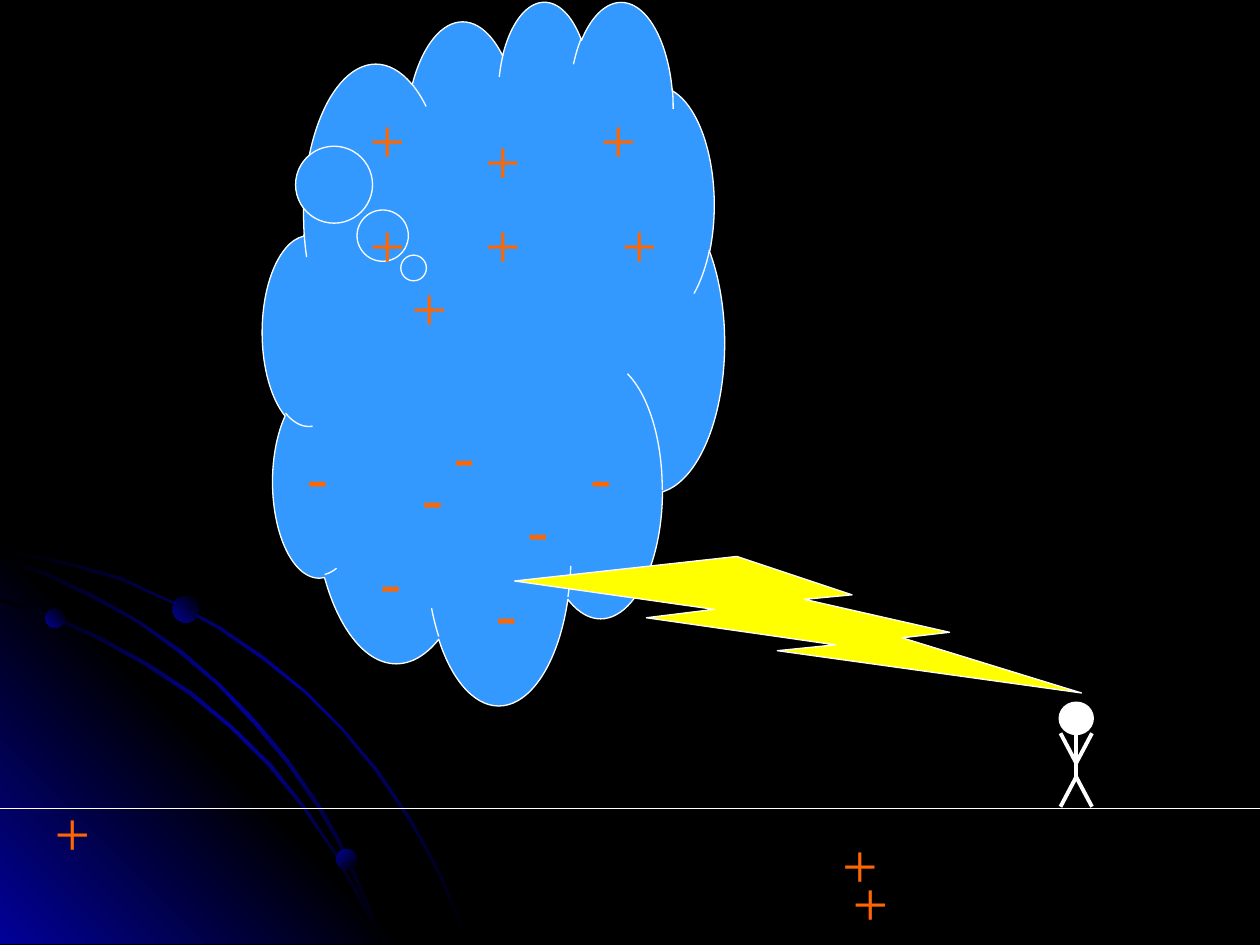
"""Build the slide of a charged thundercloud striking a person on the ground."""
from lxml.etree import SubElement
from pptx import Presentation
from pptx.dml.color import RGBColor
from pptx.enum.shapes import MSO_CONNECTOR, MSO_SHAPE
from pptx.enum.text import MSO_AUTO_SIZE, PP_ALIGN
from pptx.oxml.ns import qn
from pptx.util import Pt

COLOURS = {
    "night": "000000",
    "glow": "010199",
    "cloud": "3399FF",
    "charge": "FF6600",
    "bolt": "FFFF00",
    "white": "FFFFFF",
}
GRID = Pt(0.72)
ARC_STOPS = ("night", "glow", "night")
OUTER_ARC = [
    (57, 447), (28, 441), (0, 435), (0, 438), (28, 443), (56, 449), (97, 461), (135, 478),
    (173, 499), (208, 523), (241, 549), (271, 579), (298, 612), (323, 649), (337, 673),
    (350, 698), (360, 723), (370, 749), (372, 749), (362, 723), (352, 698), (339, 673),
    (325, 648), (300, 611), (272, 578), (242, 548), (209, 521), (174, 497), (136, 477), (98, 459),
]
CORNER = [(322, 749), (0, 749), (0, 427)]
INNER_ARC = [
    (285, 714), (294, 732), (301, 749), (303, 749), (296, 730), (286, 712), (266, 676),
    (242, 640), (215, 606), (184, 576), (152, 549), (117, 526), (79, 505), (41, 488),
    (0, 475), (0, 477), (39, 490), (77, 507), (115, 528), (150, 551), (183, 578),
    (213, 608), (240, 641), (265, 677),
]
MIDDLE_ARC = [
    (0, 442), (0, 444), (36, 457), (74, 475), (109, 494), (142, 518), (173, 544), (202, 575),
    (227, 605), (252, 641), (267, 667), (280, 694), (292, 722), (301, 749), (303, 749),
    (294, 720), (282, 693), (269, 665), (254, 639), (229, 603), (204, 573), (175, 543),
    (144, 516), (111, 493), (76, 473), (39, 455),
]
PLUSES = [
    (270, 114), (348, 114), (228, 150), (270, 66), (204, 114), (204, 54), (336, 54),
    (474, 468), (480, 490), (24, 450),
]
MINUSES = [(234, 258), (294, 276), (168, 246), (276, 324), (210, 306), (252, 234), (330, 246)]
LIMBS = [
    (615, 419, 615, 445),
    (606, 461, 615, 444),
    (615, 436, 624, 419),
    (615, 444, 624, 461),
    (606, 419, 615, 436),
]


def colour(name):
    return RGBColor.from_string(COLOURS[name])


def fill_gradient(shape, names, angle):
    shape.shadow.inherit = False
    shape.line.fill.background()
    shape.fill.background()
    properties = shape._element.spPr
    gradient = properties.makeelement(qn("a:gradFill"), {"rotWithShape": "1"})
    stops = SubElement(gradient, qn("a:gsLst"))
    for index, name in enumerate(names):
        position = 100000 * index // (len(names) - 1)
        stop = SubElement(stops, qn("a:gs"), pos=str(position))
        SubElement(stop, qn("a:srgbClr"), val=COLOURS[name])
    SubElement(gradient, qn("a:lin"), ang=str(angle * 60000), scaled="0")
    properties.replace(properties.find(qn("a:noFill")), gradient)


def add_outline(shapes, points, names, angle):
    builder = shapes.build_freeform(*points[0], scale=GRID)
    builder.add_line_segments(points[1:], close=True)
    fill_gradient(builder.convert_to_shape(), names, angle)


def add_planet(shapes, left, top, size, angle):
    planet = shapes.add_shape(MSO_SHAPE.OVAL, Pt(left), Pt(top), Pt(size), Pt(size))
    fill_gradient(planet, ("glow", "night"), angle)


def add_solid(shapes, kind, bounds, name, weight=0.75):
    shape = shapes.add_shape(kind, *map(Pt, bounds))
    shape.shadow.inherit = False
    shape.fill.solid()
    shape.fill.fore_color.rgb = colour(name)
    shape.line.color.rgb = colour("white")
    shape.line.width = Pt(weight)
    return shape


def add_line(shapes, ends, weight):
    line = shapes.add_connector(MSO_CONNECTOR.STRAIGHT, *map(Pt, ends))
    line.line.color.rgb = colour("white")
    line.line.width = Pt(weight)
    SubElement(line._element.spPr, qn("a:effectLst"))


def add_sign(shapes, sign, left, top, width):
    box = shapes.add_textbox(Pt(left), Pt(top), Pt(width), Pt(50.4))
    frame = box.text_frame
    frame.word_wrap = False
    frame.auto_size = MSO_AUTO_SIZE.SHAPE_TO_FIT_TEXT
    frame.text = sign
    para = frame.paragraphs[0]
    para.alignment = PP_ALIGN.CENTER
    span = para.runs[0]
    span.font.name = "Times New Roman"
    span.font.size = Pt(36)
    span.font.color.rgb = colour("charge")


def add_orbits(page):
    shapes = page.shapes.add_group_shape().shapes
    add_outline(shapes, OUTER_ARC, ARC_STOPS, 45)
    add_outline(shapes, CORNER, ("glow", "night", "glow"), 315)
    add_outline(shapes, INNER_ARC, ARC_STOPS, 45)
    add_outline(shapes, MIDDLE_ARC, ARC_STOPS, 45)
    add_planet(shapes, 25.9, 347.8, 11, 315)
    add_planet(shapes, 192.2, 485.3, 11.5, 45)
    add_planet(shapes, 98.6, 340.6, 15.1, 315)


def add_person(page):
    shapes = page.shapes.add_group_shape().shapes
    add_solid(shapes, MSO_SHAPE.OVAL, (606, 402, 18, 17), "white", 2.25)
    for limb in LIMBS:
        add_line(shapes, limb, 2.25)


def main():
    deck = Presentation()
    deck.slide_width, deck.slide_height = Pt(720), Pt(540)
    page = deck.slides.add_slide(deck.slide_layouts[6])
    page.background.fill.solid()
    page.background.fill.fore_color.rgb = colour("night")
    add_orbits(page)
    cloud = add_solid(page.shapes, MSO_SHAPE.CLOUD_CALLOUT, (150, 0, 264, 402), "cloud")
    cloud.adjustments[0], cloud.adjustments[1] = -0.173, -0.119
    add_line(page.shapes, (0, 462, 720, 462), 0.75)
    add_person(page)
    for sign, places, width in (("+", PLUSES, 34.6), ("-", MINUSES, 26.6)):
        for left, top in places:
            add_sign(page.shapes, sign, left, top, width)
    add_solid(page.shapes, MSO_SHAPE.LIGHTNING_BOLT, (294, 318, 324, 78), "bolt")
    deck.save("out.pptx")


if __name__ == "__main__":
    main()
